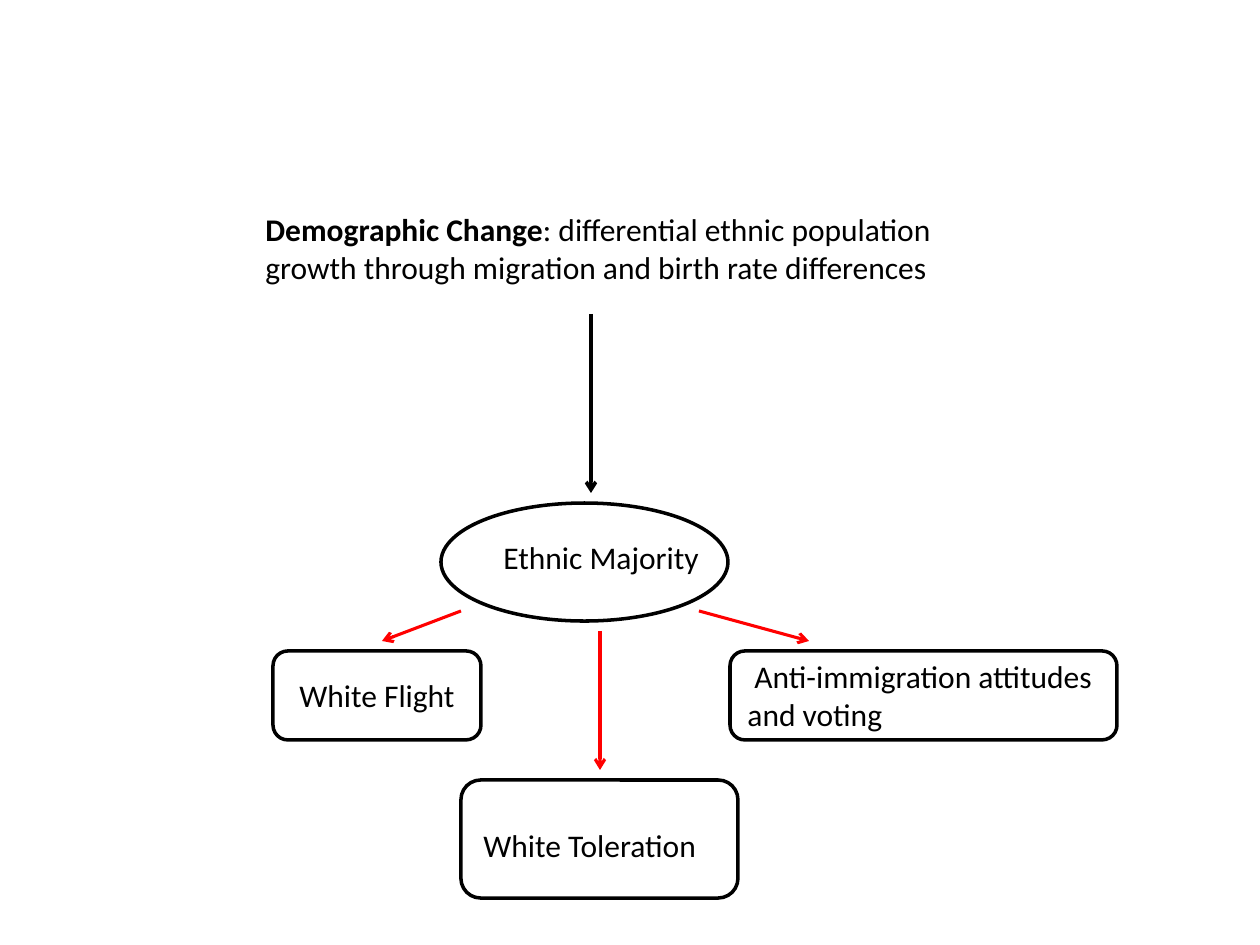
from lxml import etree
from pptx import Presentation
from pptx import util as u
from pptx.dml.color import RGBColor
from pptx.enum import shapes, text
from pptx.oxml.ns import qn

SCALE = 914400 / 126
BLACK = RGBColor(0, 0, 0)
RED = RGBColor(255, 0, 0)
FONT = {"name": "Calibri", "size": u.Pt(18)}
FRAME = {"word_wrap": True, "auto_size": text.MSO_AUTO_SIZE.SHAPE_TO_FIT_TEXT}
ROUND = shapes.MSO_SHAPE.ROUNDED_RECTANGLE
OVAL = shapes.MSO_SHAPE.OVAL

NODES = [
    (ROUND, (273, 651, 208, 89)),
    (ROUND, (730, 651, 387, 89)),
    (OVAL, (441, 503, 287, 118)),
    (ROUND, (461, 780, 277, 118)),
]
# Place, first-line indent, paragraphs of (words, bold) runs
LABELS = [
    ((253, 204, 735, 89), 0, [[
        ("Demographic Change", True),
        (": differential ethnic population growth through migration "
         "and birth rate differences", False)]]),
    ((491, 532, 297, 50), 0, [[("Ethnic Majority", False)]]),
    ((273, 670, 248, 50), 14, [[("White Flight", False)]]),
    ((735, 651, 525, 89), 7, [[("Anti-immigration attitudes", False)],
                              [("and voting", False)]]),
    ((471, 820, 258, 50), 0, [[("White Toleration", False)]]),
]
ARROWS = [
    ((591, 314, 591, 493), BLACK, 2),
    ((461, 611, 382, 641), RED, 1.75),
    ((699, 611, 809, 641), RED, 1.75),
    ((600, 631, 600, 770), RED, 1.75),
]


def px(*nums):
    return [u.Emu(round(n * SCALE)) for n in nums]


def style(item, vals):
    for key, val in vals.items():
        setattr(item, key, val)


def ink(line, color, width):
    line.color.rgb = color
    line.width = u.Pt(width)


def add_node(slide, kind, place):
    node = slide.shapes.add_shape(kind, *px(*place))
    node.shadow.inherit = False
    node.fill.background()
    ink(node.line, BLACK, 2)


def add_label(slide, place, indent, paras):
    frame = slide.shapes.add_textbox(*px(*place)).text_frame
    style(frame, FRAME)
    for i, runs in enumerate(paras):
        para = frame.add_paragraph() if i else frame.paragraphs[0]
        if indent and not i:
            para._p.get_or_add_pPr().set("indent", str(px(indent)[0]))
        for words, bold in runs:
            run = para.add_run()
            run.text = words
            style(run.font, {**FONT, "bold": bold})
            run.font.color.rgb = BLACK


def add_arrow(slide, ends, color, width):
    arrow = slide.shapes.add_connector(
        shapes.MSO_CONNECTOR.STRAIGHT, *px(*ends))
    ink(arrow.line, color, width)
    props = arrow._element.spPr
    etree.SubElement(props.find(qn("a:ln")), qn("a:tailEnd"), type="arrow")
    etree.SubElement(props, qn("a:effectLst"))


def main():
    deck = Presentation()
    deck.slide_width, deck.slide_height = px(1260, 945)
    slide = deck.slides.add_slide(deck.slide_layouts[6])
    for add, items in ((add_node, NODES), (add_label, LABELS),
                       (add_arrow, ARROWS)):
        for item in items:
            add(slide, *item)
    deck.save("out.pptx")


if __name__ == "__main__":
    main()
